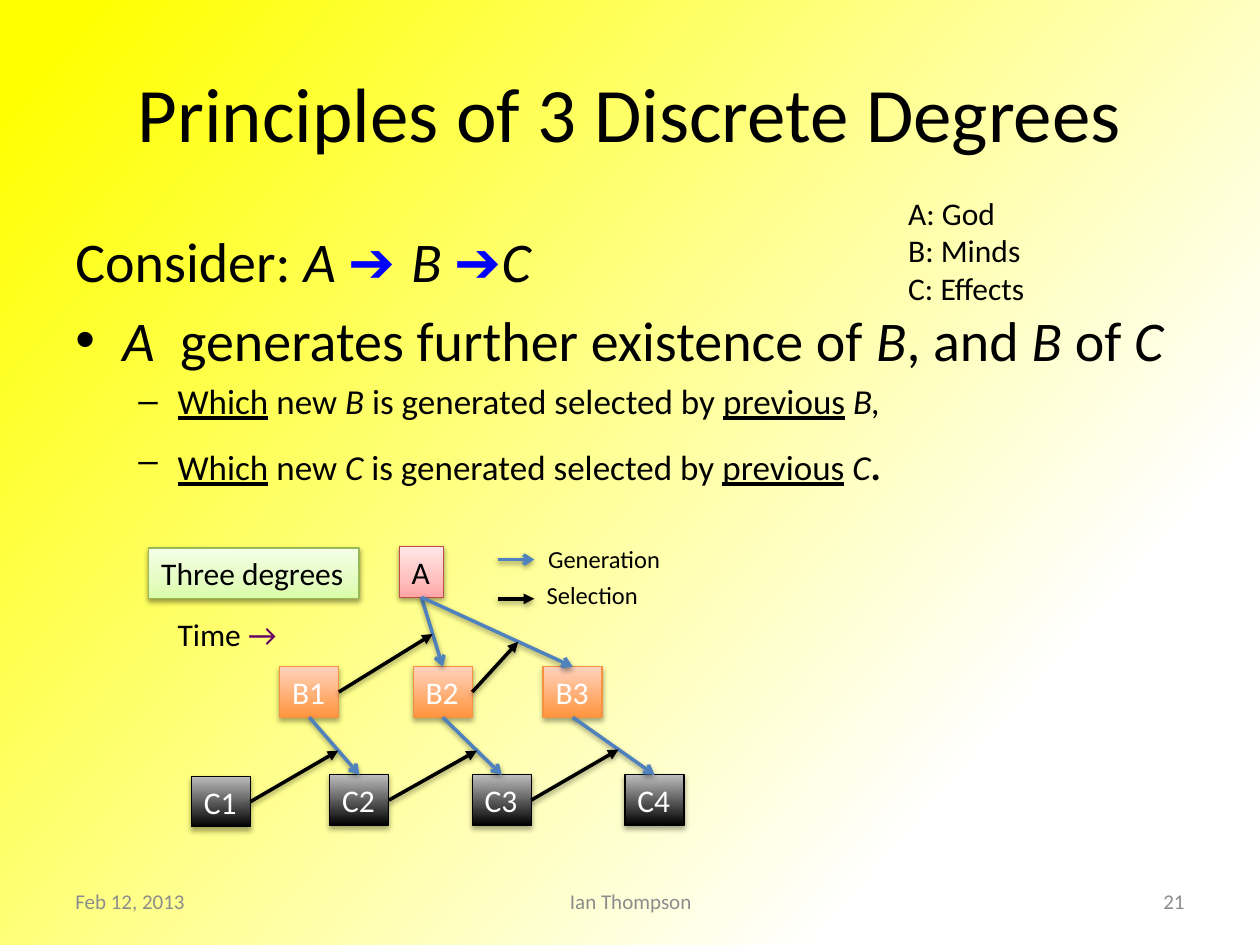
from dataclasses import dataclass

from pptx import Presentation
from pptx.dml.color import RGBColor
from pptx.enum.shapes import MSO_CONNECTOR, MSO_SHAPE
from pptx.enum.text import MSO_ANCHOR, MSO_AUTO_SIZE, PP_ALIGN
from pptx.oxml import parse_xml
from pptx.oxml.ns import nsdecls, qn
from pptx.util import Cm, Pt

LEFT, CENTER, RIGHT = PP_ALIGN.LEFT, PP_ALIGN.CENTER, PP_ALIGN.RIGHT
TOP, MIDDLE = MSO_ANCHOR.TOP, MSO_ANCHOR.MIDDLE
RECTANGLE, STRAIGHT = MSO_SHAPE.RECTANGLE, MSO_CONNECTOR.STRAIGHT
GROW = MSO_AUTO_SIZE.SHAPE_TO_FIT_TEXT

COLORS = {
    "black": "000000", "white": "FFFFFF", "yellow": "FFFF00", "blue": "0000FF",
    "purple": "660066", "grey": "8C8C8C", "generation": "4F81BD",
}
BOX_HEIGHT = 1.02
B_TOP, C_TOP = 13.44, 15.62


@dataclass(frozen=True)
class Look:
    line: str
    text: str
    stops: tuple
    shadow_alpha: int = 35
    shadow_distance: float = 1.8


@dataclass(frozen=True)
class Node:
    label: str
    left: float
    top: float
    width: float
    look: Look

    def bottom_center(self) -> tuple:
        return self.left + self.width / 2, self.top + BOX_HEIGHT

    def top_center(self) -> tuple:
        return self.left + self.width / 2, self.top

    def right_middle(self) -> tuple:
        return self.left + self.width, self.top + BOX_HEIGHT / 2


@dataclass(frozen=True)
class Span:
    text: str
    italic: bool = False
    underline: bool = False
    size: float = 18
    color: str = COLORS["black"]
    font: str = "Calibri"


RED = Look("BF4C48", COLORS["black"],
           ((0, "FFA6A5"), (35, "FFC0BF"), (100, "FFE7E7")), 38, 1.6)
GREEN = Look("98B955", COLORS["black"],
             ((0, "DAFDA7"), (35, "E4FCC2"), (100, "F5FFE7")), 38, 1.6)
ORANGE = Look("F69240", COLORS["white"], ((0, "FF953E"), (100, "FFD2BD")))
DARK = Look("000000", COLORS["white"], ((0, "000000"), (100, "BDBDBD")))

NODES = {node.label: node for node in (
    Node("Three degrees", 3.0, 11.05, 4.24, GREEN),
    Node("A", 8.05, 11.02, 0.89, RED),
    Node("B1", 5.64, B_TOP, 1.19, ORANGE),
    Node("B2", 8.33, B_TOP, 1.19, ORANGE),
    Node("B3", 10.95, B_TOP, 1.19, ORANGE),
    Node("C1", 3.86, C_TOP + 0.03, 1.19, DARK),
    Node("C2", 6.65, C_TOP, 1.19, DARK),
    Node("C3", 9.52, C_TOP, 1.19, DARK),
    Node("C4", 12.6, C_TOP, 1.19, DARK),
)}

# Parent, child, the node that selects, and how far along the line it points.
STEPS = (
    ("A", "B2", "B1", 0.53), ("A", "B3", "B2", 0.64),
    ("B1", "C2", "C1", 0.58), ("B2", "C3", "C2", 0.58), ("B3", "C4", "C3", 0.56),
)


def set_gradient(parent, stops: tuple, angle: int) -> None:
    """Put a gradient in place of the solid fill directly under parent."""
    marks = "".join(f'<a:gs pos="{pos * 1000}"><a:srgbClr val="{color}"/></a:gs>'
                    for pos, color in stops)
    gradient = parse_xml(f'<a:gradFill {nsdecls("a")} rotWithShape="1"><a:gsLst>{marks}'
                         f'</a:gsLst><a:lin ang="{angle * 60000}" scaled="0"/></a:gradFill>')
    parent.replace(parent.find(qn("a:solidFill")), gradient)


def add_shadow(properties, alpha: int = 38, distance: float = 1.6) -> None:
    properties.append(parse_xml(
        f'<a:effectLst {nsdecls("a")}><a:outerShdw blurRad="{Pt(3.1)}" '
        f'dist="{Pt(distance)}" dir="5400000" rotWithShape="0"><a:srgbClr val="000000">'
        f'<a:alpha val="{alpha * 1000}"/></a:srgbClr></a:outerShdw></a:effectLst>'))


def write(para, text: str, *, size: float = 18, color: str = COLORS["black"],
          font: str = "Calibri", italic: bool = False, underline: bool = False) -> None:
    run = para.add_run()
    run.text = text
    run.font.size, run.font.name = Pt(size), font
    run.font.italic, run.font.underline = italic, underline
    run.font.color.rgb = RGBColor.from_string(color)


def write_spans(para, spans: tuple) -> None:
    for span in spans:
        write(para, span.text, size=span.size, color=span.color, font=span.font,
              italic=span.italic, underline=span.underline)


def add_text(page, place: tuple, lines: tuple, align=LEFT, anchor=TOP, wrap: bool = True):
    """Add a text box with one paragraph for each tuple of spans."""
    box = page.shapes.add_textbox(*map(Cm, place))
    frame = box.text_frame
    frame.word_wrap, frame.vertical_anchor = wrap, anchor
    if not wrap:
        frame.auto_size = GROW
    for index, spans in enumerate(lines):
        para = frame.add_paragraph() if index else frame.paragraphs[0]
        para.alignment = align
        write_spans(para, spans)
    return frame


def set_bullet(para, mark: str, margin: float, hanging: float, level: int) -> None:
    para.level = level
    properties = para._p.get_or_add_pPr()
    properties.set("marL", str(Cm(margin)))
    properties.set("indent", str(-Cm(hanging)))
    properties.append(parse_xml(f'<a:buFont {nsdecls("a")} typeface="Arial"/>'))
    properties.append(parse_xml(f'<a:buChar {nsdecls("a")} char="{mark}"/>'))


def add_node(page, node: Node) -> None:
    look = node.look
    box = page.shapes.add_shape(RECTANGLE, Cm(node.left), Cm(node.top),
                                Cm(node.width), Cm(BOX_HEIGHT))
    box.fill.solid()
    set_gradient(box._element.spPr, look.stops, 270)
    box.line.color.rgb = RGBColor.from_string(look.line)
    box.line.width = Pt(0.75)
    add_shadow(box._element.spPr, look.shadow_alpha, look.shadow_distance)
    frame = box.text_frame
    frame.word_wrap, frame.auto_size = False, GROW
    frame.paragraphs[0].alignment = LEFT
    write(frame.paragraphs[0], node.label, color=look.text)


def add_arrow(page, start: tuple, end: tuple, color: str, head: str) -> None:
    arrow = page.shapes.add_connector(STRAIGHT, *map(Cm, start + end))
    arrow.line.color.rgb = RGBColor.from_string(color)
    arrow.line.width = Pt(2)
    arrow.line._get_or_add_ln().append(
        parse_xml(f'<a:tailEnd {nsdecls("a")} type="{head}"/>'))
    add_shadow(arrow._element.spPr)


def add_generation(page, start: tuple, end: tuple) -> None:
    add_arrow(page, start, end, COLORS["generation"], "arrow")


def add_selection(page, start: tuple, end: tuple) -> None:
    add_arrow(page, start, end, COLORS["black"], "triangle")


def add_principles(page) -> None:
    def rule(letter: str, ending: tuple) -> tuple:
        return (Span("Which", underline=True, size=20), Span(" new ", size=20),
                Span(f"{letter} ", italic=True, size=20),
                Span("is generated selected by ", size=20),
                Span("previous", underline=True, size=20), Span(" ", size=20)) + ending

    def big(text: str, italic: bool = False) -> Span:
        return Span(text, italic=italic, size=32)

    def follows(text: str) -> Span:
        return Span(text, size=32, color=COLORS["blue"], font="Arial")

    frame = add_text(page, (1.27, 4.45, 22.86, 6.4), (
        (big("Consider: "), big("A ", True), follows("➔ "), big("B ", True),
         follows("➔"), big("C", True)),
        (big("A", True), big("  generates further existence of "), big("B", True),
         big(", and "), big("B", True), big(" of "), big("C", True)),
        rule("B", (Span("B,", italic=True, size=20),)),
        rule("C", (Span("C", italic=True, size=20), Span(".", italic=True, size=28))),
    ))
    for para, space in zip(frame.paragraphs, (6.4, 6.4, 4, 5.6)):
        para.space_before = Pt(space)
    set_bullet(frame.paragraphs[1], "•", 0.95, 0.95, 0)
    for para in frame.paragraphs[2:]:
        set_bullet(para, "–", 2.06, 0.79, 1)


def add_diagram(page) -> None:
    for node in NODES.values():
        add_node(page, node)
    for parent, child, selector, share in STEPS:
        start, end = NODES[parent].bottom_center(), NODES[child].top_center()
        target = tuple(a + share * (b - a) for a, b in zip(start, end))
        add_generation(page, start, end)
        add_selection(page, NODES[selector].right_middle(), target)
    add_generation(page, (10.03, 11.28), (10.77, 11.28))
    add_selection(page, (10.03, 12.07), (10.77, 12.07))
    add_text(page, (10.8, 10.85, 2.79, 0.86), ((Span("Generation", size=14),),), wrap=False)
    add_text(page, (10.77, 11.56, 2.36, 0.86), ((Span("Selection", size=14),),), wrap=False)
    add_text(page, (3.33, 12.27, 2.54, 1.02),
             ((Span("Time "), Span("→", color=COLORS["purple"])),), wrap=False)


def main() -> None:
    deck = Presentation()
    deck.slide_width, deck.slide_height = Cm(25.4), Cm(19.05)
    page = deck.slides.add_slide(deck.slide_layouts[6])
    page.background.fill.solid()
    set_gradient(page._element.find(".//" + qn("p:bgPr")),
                 ((4, COLORS["yellow"]), (79, COLORS["white"])), 41)
    add_text(page, (1.27, 0.66, 22.86, 3.18),
             ((Span("Principles of 3 Discrete Degrees", size=44),),), CENTER, MIDDLE)
    add_principles(page)
    for text, left, width, align in (("Feb 12, 2013", 1.27, 5.92, LEFT),
                                     ("Ian Thompson", 8.69, 8.05, CENTER),
                                     ("21", 18.21, 5.92, RIGHT)):
        add_text(page, (left, 17.65, width, 1.02),
                 ((Span(text, size=12, color=COLORS["grey"]),),), align, MIDDLE)
    add_diagram(page)
    add_text(page, (18.06, 3.78, 2.92, 2.57),
             ((Span("A: God"),), (Span("B: Minds"),), (Span("C: Effects"),)), wrap=False)
    deck.save("out.pptx")


if __name__ == "__main__":
    main()
